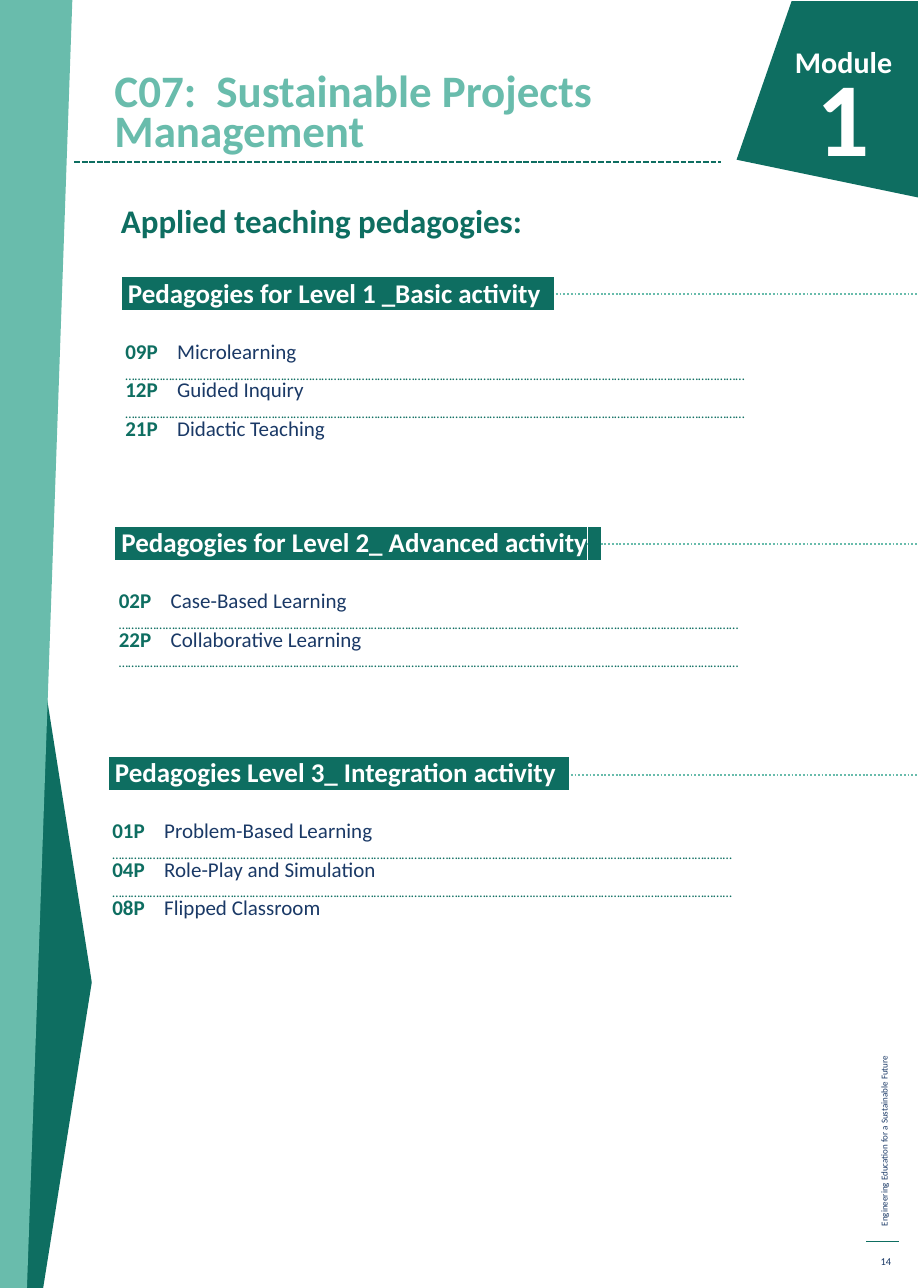
from dataclasses import dataclass

from lxml import etree
from pptx import Presentation
from pptx.dml.color import RGBColor
from pptx.enum.dml import MSO_LINE
from pptx.enum.shapes import MSO_CONNECTOR
from pptx.enum.text import MSO_ANCHOR, MSO_AUTO_SIZE, PP_ALIGN
from pptx.oxml.ns import qn
from pptx.util import Pt

LEFT, RIGHT, JUST = PP_ALIGN.LEFT, PP_ALIGN.RIGHT, PP_ALIGN.JUSTIFY
TOP, MID, BOTTOM = MSO_ANCHOR.TOP, MSO_ANCHOR.MIDDLE, MSO_ANCHOR.BOTTOM
DASH, DOT = MSO_LINE.SQUARE_DOT, MSO_LINE.ROUND_DOT
STRAIGHT = MSO_CONNECTOR.STRAIGHT
FIXED = MSO_AUTO_SIZE.NONE
COMPARE = 4


@dataclass(frozen=True)
class Theme:
    """Colours, type sizes and line pitch of the page."""
    font: str = "Calibri"
    dark: str = "0E6E61"
    mint: str = "69BCAC"
    navy: str = "1A3966"
    white: str = "FFFFFF"
    title: int = 30
    lead: int = 22
    badge: int = 20
    digit: int = 70
    head: int = 18
    item: int = 14
    rule: int = 9
    page: int = 7
    foot: int = 6
    pitch: float = 12.8


THEME = Theme()
RULE = "……………………………………………………………………………………………………………………….………………………………………………………"
RULE_WIDTH = 412
LEVELS = (
    (189.4, 195.84, " Pedagogies for Level 1 _Basic activity", False,
     (("09P", "Microlearning"), ("12P", "Guided Inquiry"),
      ("21P", "Didactic Teaching"))),
    (355.7, 362.88, " Pedagogies for Level 2_ Advanced activity", True,
     (("02P", "Case-Based Learning"), ("22P", "Collaborative Learning"))),
    (509, 516.96, " Pedagogies Level 3_ Integration activity", False,
     (("01P", "Problem-Based Learning"), ("04P", "Role-Play and Simulation"),
      ("08P", "Flipped Classroom"))),
)


def apply(target, values):
    """Set each named value on the target."""
    for name, value in values.items():
        setattr(target, name, value)


def place(shape, box, anchor=TOP):
    """Move a text shape and return its cleared frame."""
    names = ("left", "top", "width", "height")
    apply(shape, dict(zip(names, map(Pt, box))))
    frame = shape.text_frame
    apply(frame, {"word_wrap": True, "auto_size": FIXED,
                  "vertical_anchor": anchor})
    return frame


def add_run(para, text, size, color, bold=False):
    """Add a styled run."""
    run = para.add_run()
    run.text = text
    apply(run.font, {"size": Pt(size), "bold": bold, "name": THEME.font})
    run.font.color.rgb = RGBColor.from_string(color)
    return run


def format_para(para, align=LEFT, pitch=None, indent=None):
    """Set paragraph layout and drop any bullet."""
    apply(para, {"alignment": align, "space_before": Pt(0),
                 "line_spacing": pitch})
    props = para._p.get_or_add_pPr()
    left, first = indent or (0, 0)
    props.set("marL", str(Pt(left)))
    props.set("indent", str(Pt(first)))
    etree.SubElement(props, qn("a:buNone"))


def write(shape, box, text, size, color, bold=True, align=LEFT,
          anchor=TOP, pitch=None):
    """Fill a text shape with one paragraph."""
    para = place(shape, box, anchor).paragraphs[0]
    format_para(para, align, pitch)
    return add_run(para, text, size, color, bold)


def add_label(slide, box, *args, **opts):
    """Add a text box with one paragraph."""
    shape = slide.shapes.add_textbox(0, 0, 0, 0)
    write(shape, box, *args, **opts)
    return shape


def add_line(slide, x1, y, x2, color, width, dash=None):
    """Add a level line."""
    line = slide.shapes.add_connector(STRAIGHT, *map(Pt, (x1, y, x2, y)))
    line.line.color.rgb = RGBColor.from_string(color)
    apply(line.line, {"width": Pt(width), "dash_style": dash})
    etree.SubElement(line._element.spPr, qn("a:effectLst"))


def add_outline(slide, points, color):
    """Add a filled polygon."""
    first, *rest = [(Pt(x), Pt(y)) for x, y in points]
    pen = slide.shapes.build_freeform(*first)
    pen.add_line_segments(rest, close=True)
    shape = pen.convert_to_shape()
    shape.shadow.inherit = False
    shape.fill.solid()
    shape.fill.fore_color.rgb = RGBColor.from_string(color)
    shape.line.fill.background()


def mark(run, color):
    """Highlight a run."""
    props = run._r.get_or_add_rPr()
    light = etree.Element(qn("a:highlight"))
    etree.SubElement(light, qn("a:srgbClr")).set("val", color)
    props.find(qn("a:solidFill")).addnext(light)


def add_head(slide, x, y, text):
    """Add a highlighted level heading."""
    para = place(slide.shapes.add_textbox(0, 0, 0, 0),
                 (x, y, 482.4, 23.76)).paragraphs[0]
    format_para(para, JUST, Pt(THEME.pitch), (0.72, 0))
    for part, color in ((text, THEME.white), (". ", THEME.dark)):
        mark(add_run(para, part, THEME.head, color, True), THEME.dark)


def add_rule(para):
    """Fill a paragraph with a tight dotted leader."""
    run = add_run(para, RULE, THEME.rule, THEME.dark)
    full = THEME.rule * (0.69 * RULE.count("…") + 0.25 * RULE.count("."))
    gap = (RULE_WIDTH - full) / len(RULE)
    run._r.get_or_add_rPr().set("spc", str(round(gap * 100)))


def fill_list(shape, x, y, items, tail):
    """Write coded items with dotted rules between them."""
    count = 2 * len(items) - (not tail)
    frame = place(shape, (x, y, 478.08, count * THEME.pitch + 12))
    for row in range(count):
        para = frame.add_paragraph() if row else frame.paragraphs[0]
        format_para(para, LEFT, Pt(THEME.pitch), (35.28, -34.56))
        if row % 2:
            add_rule(para)
        else:
            code, name = items[row // 2]
            add_run(para, code + "\t", THEME.item, THEME.dark, True)
            add_run(para, name, THEME.item, THEME.navy)


def add_frame(slide):
    """Add the side bands, badge and footer."""
    add_outline(slide, ((28.8, 858.96), (16.56, 858.96), (16.56, 372.24),
                        (59.76, 645.84), (61.2, 655.2)), THEME.dark)
    add_outline(slide, ((0, 0), (48.24, 0), (18, 858.96), (0, 858.96)),
                THEME.mint)
    add_outline(slide, ((617.04, 0.72), (527.76, 0.72), (491.04, 106.56),
                        (615.6, 132.48)), THEME.dark)
    add_label(slide, (472.32, 25.2, 129.6, 102.24), "Module",
              THEME.badge, THEME.white, align=RIGHT)
    add_label(slide, (457.2, 30.96, 129.6, 102.24), "1",
              THEME.digit, THEME.white, align=RIGHT)
    add_line(slide, 49.68, 108, 480.96, THEME.dark, 1.25, DASH)
    foot = add_label(slide, (427.68, 655.92, 323.28, 14.4),
                     "Engineering Education for a Sustainable Future",
                     THEME.foot, THEME.navy, bold=False)
    foot.rotation = 270
    add_line(slide, 577.44, 828, 599.04, THEME.dark, 0.75)
    add_label(slide, (577.44, 830.88, 23.76, 20.88), "14", THEME.page,
              THEME.navy, bold=False, align=RIGHT, anchor=MID)


def main():
    """Build and save the page."""
    deck = Presentation()
    deck.slide_width, deck.slide_height = Pt(612), Pt(858.96)
    slide = deck.slides.add_slide(deck.slide_layouts[COMPARE])
    title, lead, *lists = slide.placeholders
    add_frame(slide)
    write(title, (69.12, 44, 385.92, 64),
          "C07:  Sustainable Projects Management", THEME.title, THEME.mint,
          anchor=BOTTOM, pitch=Pt(26.8))
    write(lead, (73.44, 133.2, 398.88, 75.6), "Applied teaching pedagogies:",
          THEME.lead, THEME.dark, pitch=0.9)
    for step, (body, level) in enumerate(zip(lists, LEVELS)):
        top, mid, head, tail, items = level
        x = 73.44 - 4.32 * step
        add_line(slide, 181, mid, 612, THEME.mint, 1.25, DOT)
        add_head(slide, x, top, head)
        fill_list(body, x + 2.16, top + 36.7, items, tail)
    deck.save("out.pptx")


if __name__ == "__main__":
    main()
